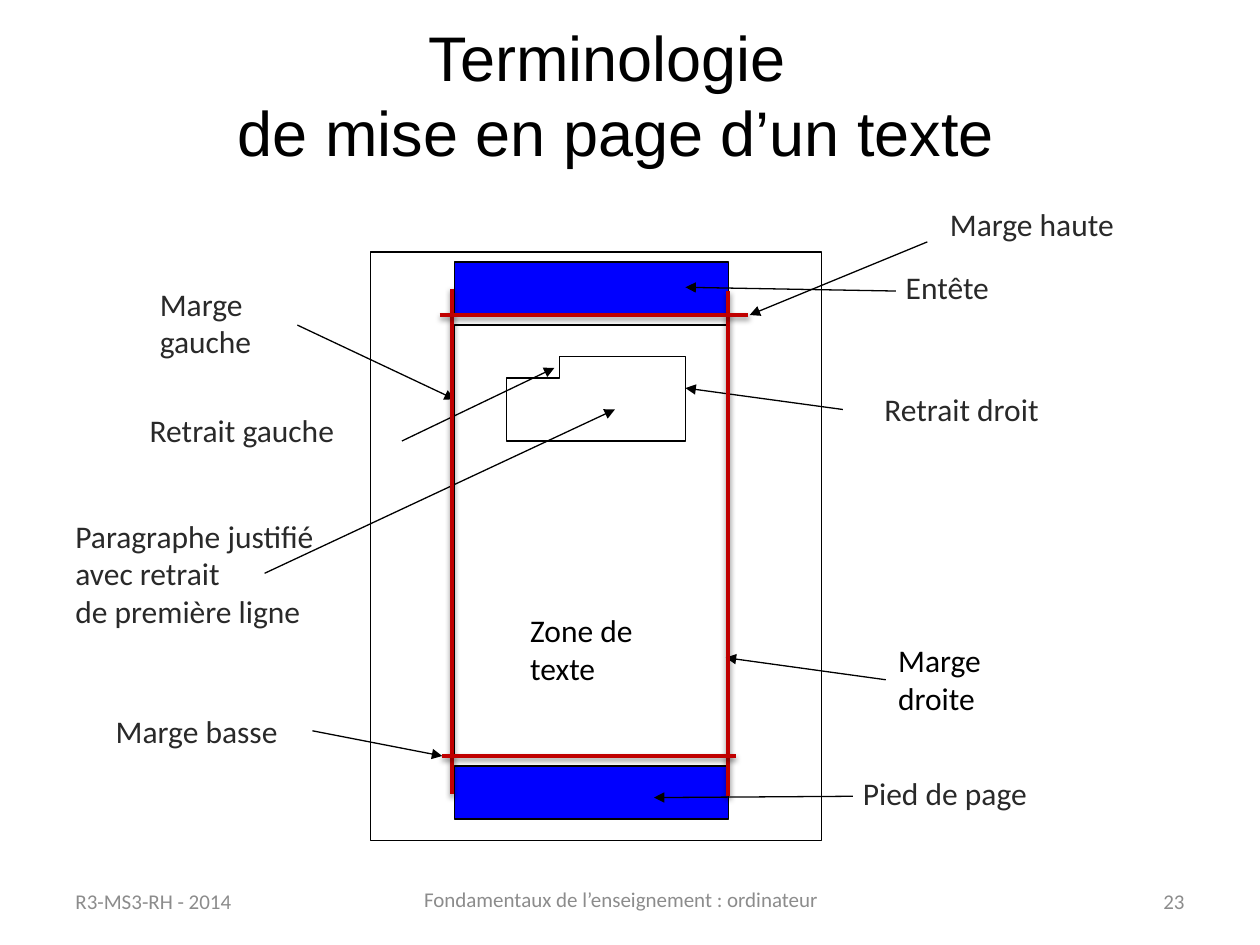
from lxml import etree
from pptx import Presentation
from pptx.dml.color import RGBColor as RGB
from pptx.enum.shapes import MSO_CONNECTOR as LINK, MSO_SHAPE as FORM
from pptx.enum.text import MSO_ANCHOR as ANCHOR, PP_ALIGN as ALIGN
from pptx.oxml import parse_xml
from pptx.oxml.ns import nsdecls, qn
from pptx.util import Pt

PX = 9144
BLACK = RGB(0, 0, 0)
DARK = RGB(0x29, 0x29, 0x29)
GRAY = RGB(0x8C, 0x8C, 0x8C)
WHITE = RGB(255, 255, 255)
BLUE = RGB(0, 0, 255)
RED = RGB(0xC0, 0, 0)
SHADOW = (
    f'<a:effectLst {nsdecls("a")}><a:outerShdw blurRad="39370" dist="20320" '
    'dir="5400000" rotWithShape="0"><a:srgbClr val="000000">'
    '<a:alpha val="38000"/></a:srgbClr></a:outerShdw></a:effectLst>'
)

deck = Presentation()
deck.slide_width, deck.slide_height = 1000 * PX, 750 * PX
slide = deck.slides.add_slide(deck.slide_layouts[6])
shapes = slide.shapes


def write(text, box, size=18, font="Calibri", color=DARK, align=ALIGN.LEFT,
          anchor=ANCHOR.TOP, wrap=False, fill=None):
    item = shapes.add_textbox(*[n * PX for n in box])
    if fill is not None:
        item.fill.solid()
        item.fill.fore_color.rgb = fill
    frame = item.text_frame
    frame.word_wrap = wrap
    frame.vertical_anchor = anchor
    frame.text = text
    for para in frame.paragraphs:
        para.alignment = align
        para.font.size = Pt(size)
        para.font.name = font
        para.font.color.rgb = color
    return item


def draw(start, end, color=BLACK, width=0.75, arrow=True):
    link = shapes.add_connector(LINK.STRAIGHT, *[n * PX for n in start + end])
    link.line.color.rgb = color
    link.line.width = Pt(width)
    props = link._element.spPr
    if arrow:
        etree.SubElement(link.line._get_or_add_ln(), qn("a:tailEnd"), type="triangle")
        etree.SubElement(props, qn("a:effectLst"))
    else:
        props.append(parse_xml(SHADOW))
    return link


for box, fill in [
    ((294, 200, 358, 467), None),
    ((361, 258, 217, 342), None),
    ((361, 608, 217, 42), BLUE),
    ((361, 208, 217, 42), BLUE),
]:
    rect = shapes.add_shape(FORM.RECTANGLE, *[n * PX for n in box])
    rect.shadow.inherit = False
    rect.line.color.rgb = BLACK
    rect.line.width = Pt(0.75)
    if fill is None:
        rect.fill.background()
    else:
        rect.fill.solid()
        rect.fill.fore_color.rgb = fill

path = shapes.build_freeform(444, 283, scale=PX)
path.add_line_segments([(544, 283), (544, 350), (402, 350), (402, 300), (444, 300)])
block = path.convert_to_shape()
block.shadow.inherit = False
block.fill.background()
block.line.color.rgb = BLACK
block.line.width = Pt(0.75)

for text, box in [
    ("Retrait gauche", (109, 321, 184, 40)),
    ("Marge haute", (744, 158, 162, 40)),
    ("Pied de page", (675, 609, 169, 40)),
    ("Entête", (709, 208, 93, 40)),
    ("Retrait droit", (692, 305, 151, 40)),
]:
    write(text, box)
write("Marge gauche", (117, 221, 127, 71), wrap=True)
write("Paragraphe justifié\navec retrait\nde première ligne", (50, 405, 238, 101), fill=WHITE)
write("Zone de texte", (411, 480, 114, 71), color=BLACK, wrap=True)
right = write("Marge droite", (703, 504, 114, 71), color=BLACK, wrap=True)
low = write("Marge basse", (82, 560, 166, 40))

for start, end in [
    ((736, 192), (595, 250)),
    ((236, 258), (361, 317)),
    ((677, 632), (519, 633)),
    ((711, 231), (544, 228)),
    ((319, 350), (440, 292)),
    ((669, 325), (544, 308)),
    ((210, 455), (488, 325)),
]:
    draw(start, end)
draw((703, 539), (576, 522)).begin_connect(right, 1)
draw((248, 580), (351, 600)).begin_connect(low, 3)

for start, end in [
    ((359, 229), (359, 630)),
    ((578, 231), (578, 632)),
    ((584, 600), (351, 600)),
    ((349, 250), (594, 250)),
]:
    draw(start, end, color=RED, width=2.5, arrow=False)

write("Terminologie \vde mise en page d’un texte", (28, 13, 922, 123), size=36,
      font="Arial", color=BLACK, align=ALIGN.CENTER, anchor=ANCHOR.MIDDLE, wrap=True)
for text, box, align in [
    ("R3-MS3-RH - 2014", (50, 695, 152, 40), ALIGN.LEFT),
    ("Fondamentaux de l’enseignement : ordinateur", (305, 694, 376, 40), ALIGN.CENTER),
    ("23", (797, 695, 153, 40), ALIGN.RIGHT),
]:
    write(text, box, size=12, color=GRAY, align=align, anchor=ANCHOR.MIDDLE, wrap=True)

deck.save("out.pptx")
